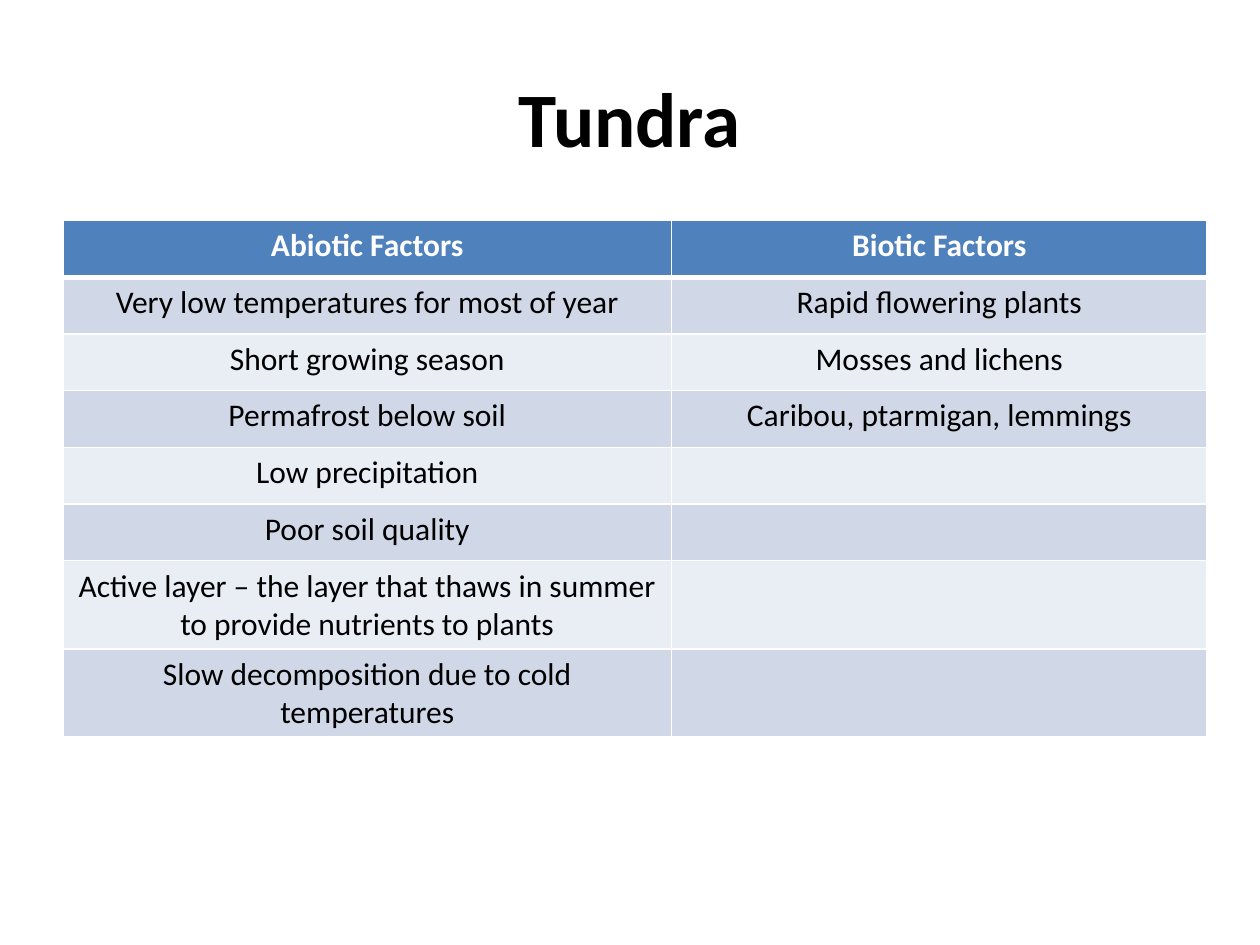
import pptx
import pptx.dml.color
import pptx.enum.text
import pptx.oxml
import pptx.oxml.ns
import pptx.util
from pptx.util import Inches

FONT = "Calibri"
HEADER_FILL = "4F81BD"
BAND_FILLS = ["D0D8E8", "E9EDF4"]
COLUMN_WIDTHS = [4.83, 4.25]
ROW_HEIGHT = 0.45
FACTORS = [
    ("Abiotic Factors", "Biotic Factors"),
    ("Very low temperatures for most of year", "Rapid flowering plants"),
    ("Short growing season", "Mosses and lichens"),
    ("Permafrost below soil", "Caribou, ptarmigan, lemmings"),
    ("Low precipitation", ""),
    ("Poor soil quality", ""),
    ("Active layer – the layer that thaws in summer to provide nutrients to plants", ""),
    ("Slow decomposition due to cold temperatures", ""),
]


def rgb(color):
    return pptx.dml.color.RGBColor.from_string(color)


def set_text(tf, text, size, color, bold):
    tf.text = text
    p = tf.paragraphs[0]
    p.alignment = pptx.enum.text.PP_ALIGN.CENTER
    for r in p.runs:
        r.font.name = FONT
        r.font.size = pptx.util.Pt(size)
        r.font.bold = bold
        r.font.color.rgb = rgb(color)


def set_borders(cell, color, widths):
    """Add cell borders; widths maps the sides L, R, T, B, in that order, to points."""
    tc_pr = cell._tc.get_or_add_tcPr()
    for side, width in widths.items():
        tc_pr.append(pptx.oxml.parse_xml(
            f'<a:ln{side} {pptx.oxml.ns.nsdecls("a")} w="{pptx.util.Pt(width)}">'
            f'<a:solidFill><a:srgbClr val="{color}"/></a:solidFill></a:ln{side}>'
        ))


def add_title(s, text):
    sp = s.shapes.add_textbox(Inches(0.5), Inches(0.3), Inches(9), Inches(1.25))
    tf = sp.text_frame
    tf.word_wrap = True
    tf.vertical_anchor = pptx.enum.text.MSO_ANCHOR.MIDDLE
    set_text(tf, text, 44, "000000", True)


def add_factor_table(s):
    table = s.shapes.add_table(
        len(FACTORS), len(COLUMN_WIDTHS), Inches(0.5), Inches(1.75),
        Inches(sum(COLUMN_WIDTHS)), Inches(ROW_HEIGHT * len(FACTORS)),
    ).table
    for column, width in zip(table.columns, COLUMN_WIDTHS):
        column.width = Inches(width)
    for i, (row, texts) in enumerate(zip(table.rows, FACTORS)):
        row.height = Inches(ROW_HEIGHT)
        header = i == 0
        fill = HEADER_FILL if header else BAND_FILLS[(i - 1) % 2]
        borders = {"L": 1, "R": 1, "T": 3 if i == 1 else 1, "B": 3 if header else 1}
        for cell, text in zip(row.cells, texts):
            set_borders(cell, "FFFFFF", borders)
            cell.fill.solid()
            cell.fill.fore_color.rgb = rgb(fill)
            set_text(cell.text_frame, text, 18, "FFFFFF" if header else "000000", header)


def main():
    prs = pptx.Presentation()
    prs.slide_width = Inches(10)
    prs.slide_height = Inches(7.5)
    s = prs.slides.add_slide(prs.slide_layouts[6])
    add_title(s, "Tundra")
    add_factor_table(s)
    prs.save("out.pptx")


if __name__ == "__main__":
    main()
